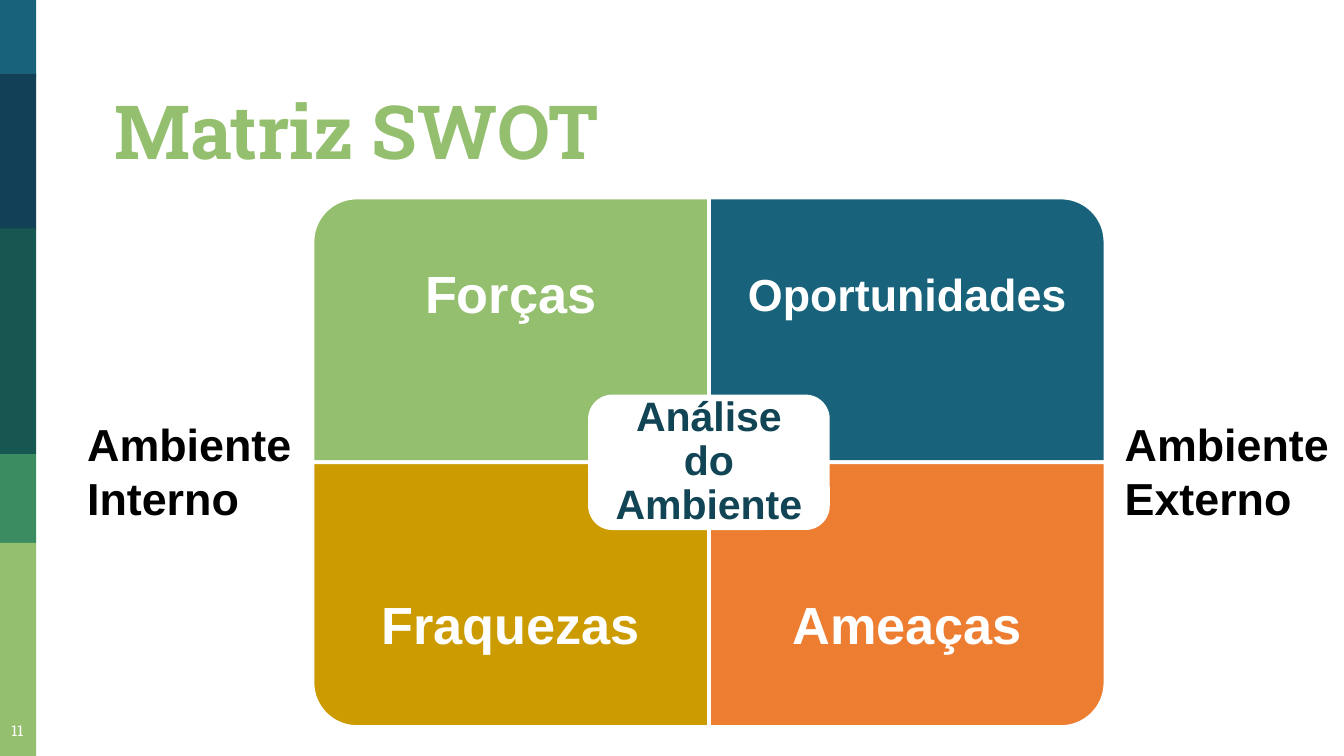
import math
import pptx
import pptx.util
import pptx.dml.color
import pptx.enum.shapes
import pptx.enum.text

COLORS = {
    "white": "FFFFFF", "black": "000000", "green": "94BF6E", "blue": "18637B",
    "navy": "124057", "pine": "165751", "leaf": "3B8D61", "gold": "CC9B00",
    "orange": "ED7D31", "ink": "114454",
}
COLS, ROWS = 100, 56.25
CELL = pptx.util.Inches(10 / COLS)
CENTER_X, CENTER_Y = 52.75, 34.4
QUAD_W, QUAD_H, RADIUS = 29.5, 19.7, 3.3
ALIGN = pptx.enum.text.PP_ALIGN
ANCHOR = pptx.enum.text.MSO_ANCHOR


def grid(*cells):
    return [round(c * CELL) for c in cells]


def rgb(name):
    return pptx.dml.color.RGBColor.from_string(COLORS[name])


def paint(sp, fill, line=None):
    sp.shadow.inherit = False
    sp.fill.solid()
    sp.fill.fore_color.rgb = rgb(fill)
    if line:
        sp.line.color.rgb = rgb(line)
        sp.line.width = pptx.util.Pt(2)
    else:
        sp.line.fill.background()


def write(sp, text, size, color, font="Arial", bold=True, align=ALIGN.LEFT,
          anchor=ANCHOR.TOP, insets=(1, 0.5, 1, 0.5), spacing=None):
    tf = sp.text_frame
    tf.word_wrap = True
    tf.auto_size = pptx.enum.text.MSO_AUTO_SIZE.NONE
    tf.vertical_anchor = anchor
    tf.margin_left, tf.margin_top, tf.margin_right, tf.margin_bottom = grid(*insets)
    p = tf.paragraphs[0]
    p.alignment = align
    if spacing:
        p.line_spacing = spacing
    r = p.add_run()
    r.text = text
    r.font.size = pptx.util.Pt(size)
    r.font.name = font
    r.font.bold = bold
    r.font.color.rgb = rgb(color)


def add_sidebar(s):
    bands = [("blue", 0, 5.8), ("navy", 5.5, 11.6), ("pine", 17, 16.8),
             ("leaf", 33.8, 6.6), ("green", 40.4, ROWS - 40.4)]
    for color, top, height in bands:
        sp = s.shapes.add_shape(pptx.enum.shapes.MSO_SHAPE.RECTANGLE,
                                *grid(0, top, 2.7, height))
        paint(sp, color)


def add_title(s, text):
    sp = s.shapes.title
    sp.left, sp.top, sp.width, sp.height = grid(7.5, 1.3, 87.4, 12.7)
    write(sp, text, 40, "green", "Roboto Slab", anchor=ANCHOR.BOTTOM, insets=[1] * 4)


def add_label(s, text, box, size, color, **style):
    write(s.shapes.add_textbox(*grid(*box)), text, size, color, **style)


def add_quadrant(s, text, size, color, dx, dy):
    arc = [math.radians(a) for a in range(0, 91, 5)]
    corner = [(QUAD_W - RADIUS + RADIUS * math.cos(a),
               QUAD_H - RADIUS + RADIUS * math.sin(a)) for a in arc]
    points = [(QUAD_W, 0)] + corner + [(0, QUAD_H)]
    outline = [grid(CENTER_X + dx * x, CENTER_Y + dy * y) for x, y in points]
    fb = s.shapes.build_freeform(*grid(CENTER_X, CENTER_Y), scale=1.0)
    fb.add_line_segments(outline, close=True)
    sp = fb.convert_to_shape()
    paint(sp, color, "white")
    insets = (2.2, 2.2, 2.2, 7.1) if dy < 0 else (2.2, 7.1, 2.2, 2.2)
    write(sp, text, size, "white", align=ALIGN.CENTER, anchor=ANCHOR.MIDDLE,
          insets=insets, spacing=0.9)


def add_hub(s, text):
    w, h = 17.7, 9.8
    sp = s.shapes.add_shape(pptx.enum.shapes.MSO_SHAPE.ROUNDED_RECTANGLE,
                            *grid(CENTER_X - w / 2, CENTER_Y - h / 2, w, h))
    sp.adjustments[0] = 0.17
    paint(sp, "white", "white")
    write(sp, text, 22, "ink", align=ALIGN.CENTER, anchor=ANCHOR.MIDDLE,
          insets=[1] * 4, spacing=0.9)


def main():
    prs = pptx.Presentation()
    prs.slide_width, prs.slide_height = grid(COLS, ROWS)
    s = prs.slides.add_slide(prs.slide_layouts[5])
    add_sidebar(s)
    add_title(s, "Matriz SWOT")
    add_label(s, "11", (-0.6, 52.7, 3.8, 3.5), 8, "white", font="Roboto Slab",
              bold=False, align=ALIGN.CENTER, insets=[1] * 4)
    add_quadrant(s, "Forças", 28, "green", -1, -1)
    add_quadrant(s, "Oportunidades", 24, "blue", 1, -1)
    add_quadrant(s, "Fraquezas", 28, "gold", -1, 1)
    add_quadrant(s, "Ameaças", 28, "orange", 1, 1)
    add_hub(s, "Análise do Ambiente")
    add_label(s, "Ambiente Externo", (82.7, 30.5, 17.3, 9.1), 24, "black")
    add_label(s, "Ambiente Interno", (5.5, 30.5, 18.5, 9.1), 24, "black")
    prs.save("out.pptx")


if __name__ == "__main__":
    main()
